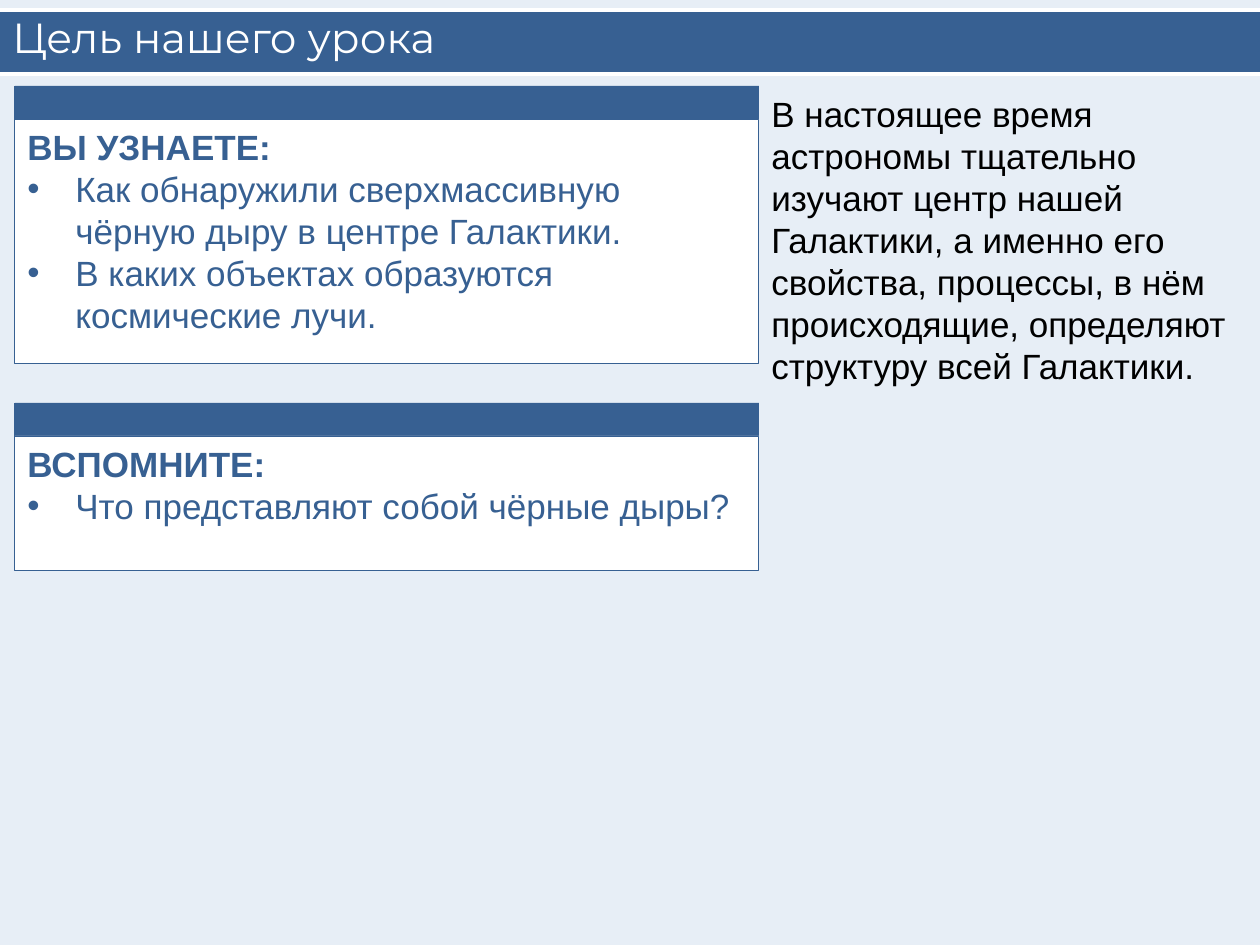
from lxml import etree
from pptx import Presentation
from pptx.dml.color import RGBColor
from pptx.enum.shapes import MSO_CONNECTOR, MSO_SHAPE
from pptx.enum.text import MSO_ANCHOR, PP_ALIGN
from pptx.oxml.ns import qn
from pptx.util import Emu, Pt

RECTANGLE = MSO_SHAPE.RECTANGLE
STRAIGHT = MSO_CONNECTOR.STRAIGHT
TOP, MIDDLE = MSO_ANCHOR.TOP, MSO_ANCHOR.MIDDLE
LEFT = PP_ALIGN.LEFT

BLUE = RGBColor(0x37, 0x60, 0x92)
WHITE = RGBColor(0xFF, 0xFF, 0xFF)
BLACK = RGBColor(0, 0, 0)
PALE_BLUE = RGBColor(0xE7, 0xEE, 0xF6)

PX_PER_INCH = 126
SLIDE_WIDTH, SLIDE_HEIGHT = 1260, 945
BULLET_INDENT = 48
HEADER_HEIGHT = 49
BODY_OFFSET = 33


def px(length):
    return Emu(round(length * 914400 / PX_PER_INCH))


def add_rectangle(slide, left, top, width, height, fill, line=None):
    shape = slide.shapes.add_shape(RECTANGLE, px(left), px(top), px(width), px(height))
    shape.shadow.inherit = False
    shape.fill.solid()
    shape.fill.fore_color.rgb = fill
    if line is None:
        shape.line.fill.background()
    else:
        shape.line.color.rgb = line
        shape.line.width = Pt(0.5)
    return shape


def add_rule(slide, left, top, width):
    connector = slide.shapes.add_connector(
        STRAIGHT, px(left), px(top), px(left + width), px(top))
    connector.line.color.rgb = WHITE
    connector.line.width = Pt(2)
    etree.SubElement(connector._element.spPr, qn("a:effectLst"))


def add_bullet(paragraph):
    properties = paragraph._p.get_or_add_pPr()
    properties.set("marL", str(px(BULLET_INDENT)))
    properties.set("indent", str(-px(BULLET_INDENT)))
    etree.SubElement(properties, qn("a:buFont")).set("typeface", "Arial")
    etree.SubElement(properties, qn("a:buChar")).set("char", "•")


def write(frame, text, first=False, bullet=False, bold=False, size=20,
          font="Arial", color=BLACK, line_spacing=Pt(24)):
    """Write one paragraph, reusing the frame's own paragraph when it is first."""
    paragraph = frame.paragraphs[0] if first else frame.add_paragraph()
    paragraph.alignment = LEFT
    paragraph.line_spacing = line_spacing
    if bullet:
        add_bullet(paragraph)
    run = paragraph.add_run()
    run.text = text
    run.font.name = font
    run.font.size = Pt(size)
    run.font.bold = bold
    run.font.color.rgb = color


def add_text_box(slide, left, top, width, height, text, anchor=TOP, **text_format):
    box = slide.shapes.add_textbox(px(left), px(top), px(width), px(height))
    frame = box.text_frame
    frame.word_wrap = True
    frame.vertical_anchor = anchor
    write(frame, text, first=True, **text_format)


def add_title_band(slide, left, top, width, height, title):
    add_rectangle(slide, left, top, width, height, BLUE)
    for rule_top in (top, top + height):
        add_rule(slide, left, rule_top, width)
    add_text_box(slide, left, top - 15, width, height + 20, title, anchor=MIDDLE,
                 size=24, font="Montserrat", color=WHITE, line_spacing=1.0)


def add_card(slide, left, top, width, height, heading, items):
    """Place a white card with a blue header strip, a heading and a bulleted list."""
    add_rectangle(slide, left, top, width, HEADER_HEIGHT, BLUE, line=BLUE)
    body = add_rectangle(slide, left, top + BODY_OFFSET, width, height - BODY_OFFSET,
                         WHITE, line=BLUE)
    frame = body.text_frame
    frame.word_wrap = True
    frame.vertical_anchor = TOP
    write(frame, heading, first=True, bold=True, color=BLUE)
    for item in items:
        write(frame, item, bullet=True, color=BLUE)


def main():
    presentation = Presentation()
    presentation.slide_width = px(SLIDE_WIDTH)
    presentation.slide_height = px(SLIDE_HEIGHT)
    slide = presentation.slides.add_slide(presentation.slide_layouts[6])
    slide.background.fill.solid()
    slide.background.fill.fore_color.rgb = PALE_BLUE

    add_title_band(slide, 0, 10, SLIDE_WIDTH, 64, "Цель нашего урока")
    add_text_box(slide, 759, 86, 501, 310,
                 "В настоящее время астрономы тщательно изучают центр нашей "
                 "Галактики, а именно его свойства, процессы, в нём происходящие, "
                 "определяют структуру всей Галактики.")
    add_card(slide, 15, 86, 744, 277, "ВЫ УЗНАЕТЕ:", [
        "Как обнаружили сверхмассивную чёрную дыру в центре Галактики.",
        "В каких объектах образуются космические лучи.",
    ])
    add_card(slide, 15, 403, 744, 168, "ВСПОМНИТЕ:", [
        "Что представляют собой чёрные дыры?",
    ])
    presentation.save("out.pptx")


if __name__ == "__main__":
    main()
